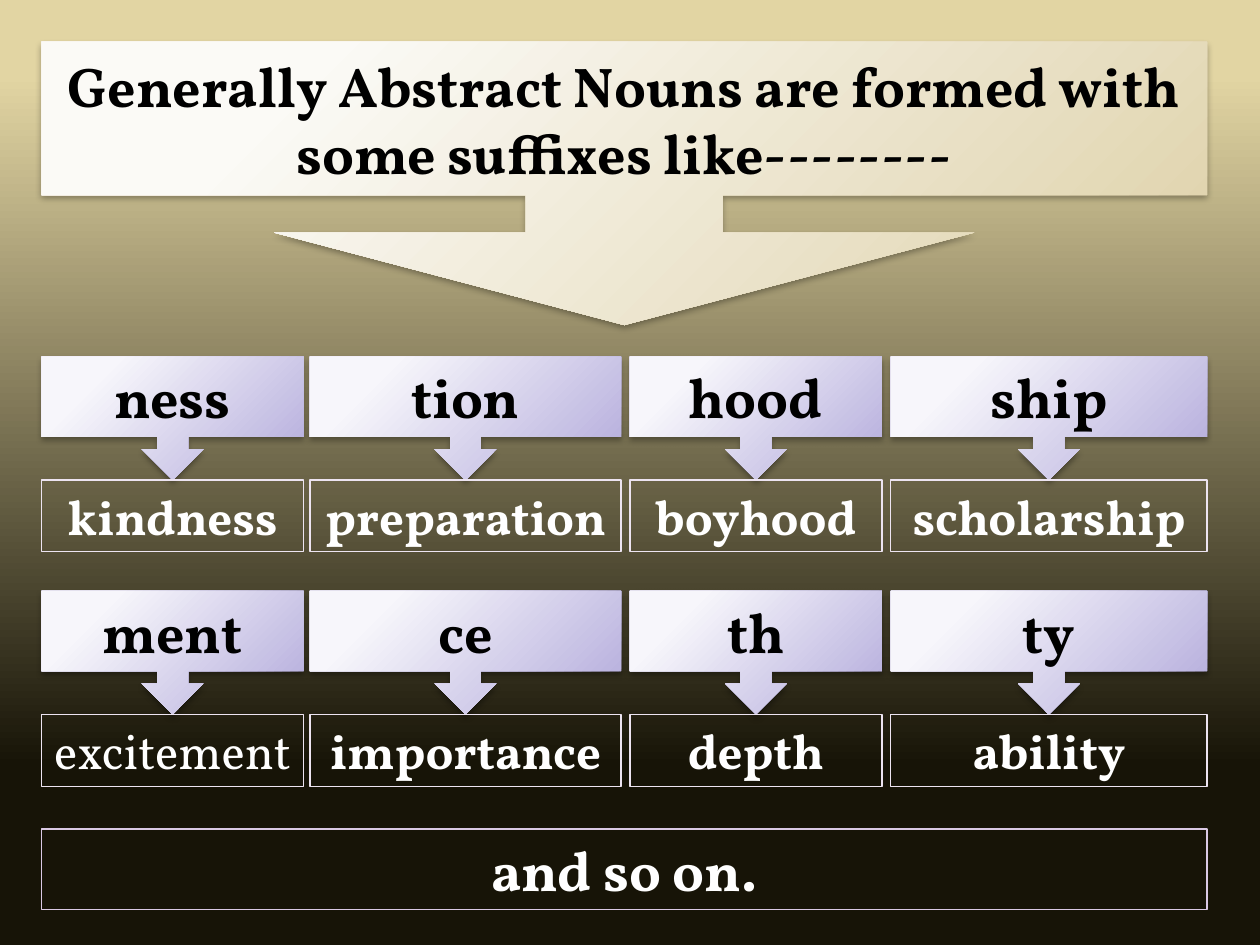
from dataclasses import dataclass

from lxml.etree import SubElement
from pptx import Presentation
from pptx.dml.color import RGBColor
from pptx.dml.fill import FillFormat
from pptx.enum.shapes import MSO_SHAPE as Preset
from pptx.enum.text import MSO_ANCHOR as Anchor, MSO_AUTO_SIZE as AutoSize, PP_ALIGN as Align
from pptx.oxml.ns import qn
from pptx.shapes.autoshape import Shape
from pptx.slide import Slide
from pptx.util import Inches, Pt

FONT = "Vollkorn"
COLORS = {
    "sand": "E2D5A3",
    "night": "171407",
    "cream": "FBFAF6",
    "tan": "DED1A8",
    "mist": "F7F6FB",
    "lavender": "B2AADB",
    "example_line": "EDE4F1",
    "closing_line": "DAC9E4",
    "black": "000000",
    "white": "FFFFFF",
}
LEFT, FULL_WIDTH = 0.33, 9.25
COLUMNS = [(LEFT, 2.08), (2.46, 2.47), (5, 2), (7.07, 2.51)]
CALLOUT_HEIGHT, EXAMPLE_HEIGHT = 0.98, 0.57
ROW_TOP, ROW_PITCH = 2.83, 1.86


@dataclass
class Box:
    left: float
    top: float
    width: float
    height: float


@dataclass
class Suffix:
    ending: str
    example: str
    bold: bool = True


SUFFIX_ROWS = [
    [
        Suffix("ness", "kindness"),
        Suffix("tion", "preparation"),
        Suffix("hood", "boyhood"),
        Suffix("ship", "scholarship"),
    ],
    [
        Suffix("ment", "excitement", bold=False),
        Suffix("ce", "importance"),
        Suffix("th", "depth"),
        Suffix("ty", "ability"),
    ],
]


def color(name: str) -> RGBColor:
    return RGBColor.from_string(COLORS[name])


def set_gradient(fill: FillFormat, stops: list[tuple[float, str]]) -> None:
    fill.gradient()
    for stop, (position, name) in zip(fill.gradient_stops, stops):
        stop.position = position
        stop.color.rgb = color(name)


def make_radial(shape: Shape) -> None:
    linear = next(shape.element.iter(qn("a:lin")))
    gradient = linear.getparent()
    gradient.remove(linear)
    radial = SubElement(gradient, qn("a:path"), path="circle")
    SubElement(radial, qn("a:fillToRect"), l="-15000", t="-15000", r="115000", b="115000")


def add_shadow(shape: Shape) -> None:
    effects = shape.element.spPr.find(qn("a:effectLst"))
    shadow = SubElement(
        effects, qn("a:outerShdw"), blurRad=str(Pt(3.5)), dist=str(Pt(2.2)),
        dir="5400000", rotWithShape="0",
    )
    shade = SubElement(shadow, qn("a:srgbClr"), val=COLORS["black"])
    SubElement(shade, qn("a:alpha"), val="32000")


def add_box(slide: Slide, preset: Preset, box: Box, text: str, size: int,
            text_color: str, bold: bool = True) -> Shape:
    shape = slide.shapes.add_shape(
        preset, Inches(box.left), Inches(box.top), Inches(box.width), Inches(box.height)
    )
    shape.shadow.inherit = False
    frame = shape.text_frame
    frame.word_wrap = True
    frame.auto_size = AutoSize.SHAPE_TO_FIT_TEXT
    frame.vertical_anchor = Anchor.TOP
    paragraph = frame.paragraphs[0]
    paragraph.alignment = Align.CENTER
    run = paragraph.add_run()
    run.text = text
    run.font.name = FONT
    run.font.size = Pt(size)
    run.font.bold = bold
    run.font.color.rgb = color(text_color)
    return shape


def add_callout(slide: Slide, box: Box, text: str, light: str, dark: str) -> Shape:
    shape = add_box(slide, Preset.DOWN_ARROW_CALLOUT, box, text, 32, "black")
    set_gradient(shape.fill, [(0.2, light), (1, dark)])
    make_radial(shape)
    shape.line.fill.background()
    add_shadow(shape)
    return shape


def add_outline(slide: Slide, box: Box, text: str, size: int, line: str, bold: bool = True) -> None:
    shape = add_box(slide, Preset.RECTANGLE, box, text, size, "white", bold)
    shape.fill.background()
    shape.line.color.rgb = color(line)
    shape.line.width = Pt(0.75)


def add_heading(slide: Slide) -> None:
    heading = add_callout(
        slide, Box(LEFT, 0.33, FULL_WIDTH, 2.25),
        "Generally Abstract Nouns are formed with some suffixes like--------", "cream", "tan",
    )
    for index, value in enumerate([0.694, 1.235, 0.326, 0.542]):
        heading.adjustments[index] = value
    heading.text_frame.auto_size = AutoSize.NONE
    heading.text_frame.vertical_anchor = Anchor.MIDDLE


def add_suffix_row(slide: Slide, top: float, suffixes: list[Suffix]) -> None:
    for (left, width), suffix in zip(COLUMNS, suffixes):
        add_callout(slide, Box(left, top, width, CALLOUT_HEIGHT), suffix.ending, "mist", "lavender")
        add_outline(
            slide, Box(left, top + CALLOUT_HEIGHT, width, EXAMPLE_HEIGHT),
            suffix.example, 28, "example_line", suffix.bold,
        )


def main() -> None:
    presentation = Presentation()
    presentation.slide_width = Inches(10)
    presentation.slide_height = Inches(7.5)
    slide = presentation.slides.add_slide(presentation.slide_layouts[6])

    background = slide.background.fill
    set_gradient(background, [(0.08, "sand"), (0.81, "night")])
    background.gradient_angle = 270

    add_heading(slide)
    for index, suffixes in enumerate(SUFFIX_ROWS):
        add_suffix_row(slide, ROW_TOP + index * ROW_PITCH, suffixes)
    add_outline(slide, Box(LEFT, 6.58, FULL_WIDTH, 0.64), "and so on.", 32, "closing_line")

    presentation.save("out.pptx")


if __name__ == "__main__":
    main()
